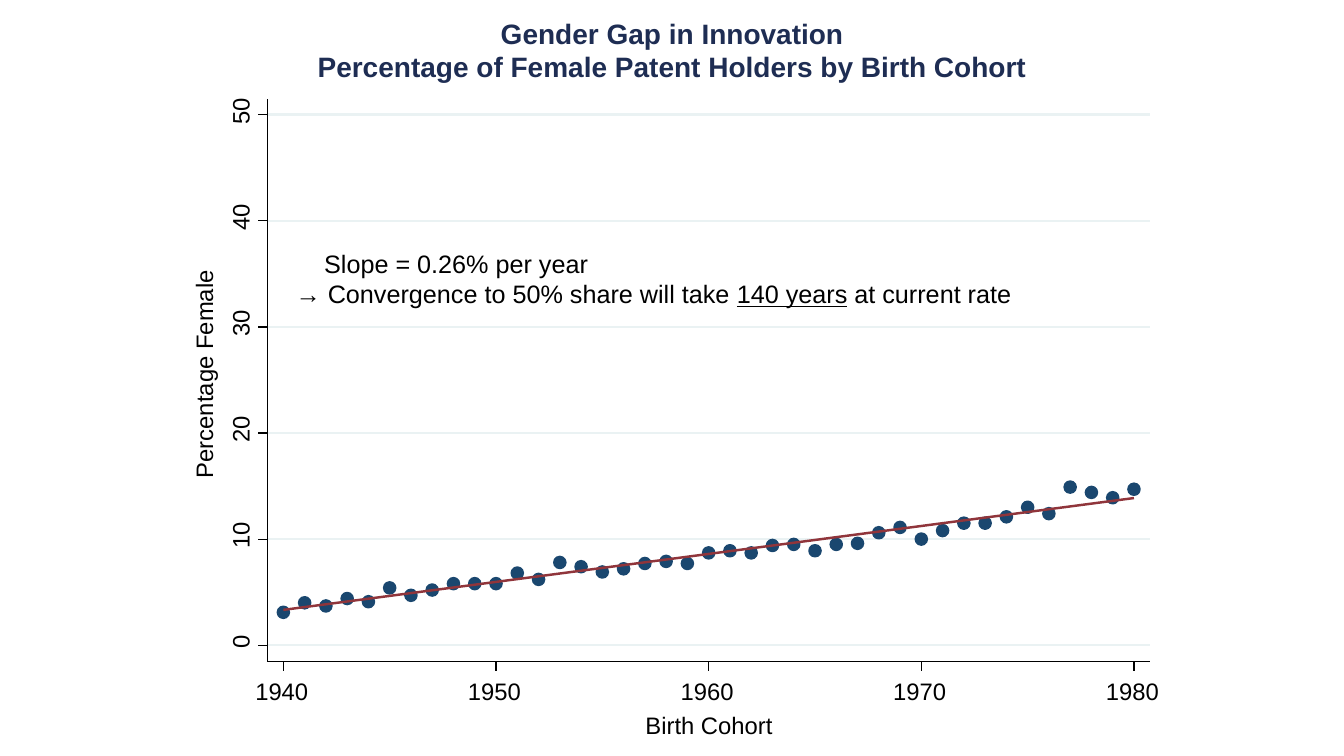
from lxml import etree
from pptx import Presentation
from pptx.dml.color import RGBColor
from pptx.enum.shapes import MSO_CONNECTOR, MSO_SHAPE
from pptx.enum.text import MSO_ANCHOR, MSO_AUTO_SIZE, PP_ALIGN
from pptx.oxml.ns import qn
from pptx.util import Cm, Pt

STRAIGHT, OVAL = MSO_CONNECTOR.STRAIGHT, MSO_SHAPE.OVAL
TOP, FIXED = MSO_ANCHOR.TOP, MSO_AUTO_SIZE.NONE
LEFT, MID = PP_ALIGN.LEFT, PP_ALIGN.CENTER

NAVY, BLUE, RED = "1E2D53", "1A476F", "90353B"
BLACK, PALE = "000000", "EAF2F3"
THIN, THICK = 0.88, 1.75
LABEL = {"name": "Arial", "size": Pt(17), "bold": False}
NOTE = {"name": "Arial", "size": Pt(18), "bold": False}
HEAD = {"name": "Arial", "size": Pt(20), "bold": True}

# Plot frame in cm, and the data range it spans
X0, Y0, X1, Y1 = 6.74, 2.49, 28.98, 16.66
TICK, DOT = 0.25, 0.28
XMIN, XMAX, YMIN, YMAX = 1939.25, 1980.75, -1.5, 51.5
SHARE = [3.1, 4.0, 3.7, 4.4, 4.1, 5.4, 4.7, 5.2, 5.8, 5.8,
         5.8, 6.8, 6.2, 7.8, 7.4, 6.9, 7.2, 7.7, 7.9, 7.7,
         8.7, 8.9, 8.7, 9.4, 9.5, 8.9, 9.5, 9.6, 10.6, 11.1,
         10.0, 10.8, 11.5, 11.5, 12.1, 13.0, 12.4, 14.9, 14.4, 13.9, 14.7]
TREND = [(1940, 3.33), (1960, 8.6), (1980, 13.87)]


def tint(code):
    return RGBColor.from_string(code)


def assign(item, values):
    for key, value in values.items():
        setattr(item, key, value)


def across(year):
    return X0 + (year - XMIN) / (XMAX - XMIN) * (X1 - X0)


def down(share):
    return Y1 - (share - YMIN) / (YMAX - YMIN) * (Y1 - Y0)


def style(font, values, code):
    assign(font, values)
    font.color.rgb = tint(code)


def stroke(line, code, width):
    line.color.rgb = tint(code)
    line.width = Pt(width)


def set_frame(frame):
    assign(frame, {"word_wrap": True, "auto_size": FIXED,
                   "vertical_anchor": TOP, "margin_left": 0,
                   "margin_right": 0, "margin_top": 0, "margin_bottom": 0})


def add_line(slide, start, end, code, width):
    line = slide.shapes.add_connector(
        STRAIGHT, *(Cm(v) for v in (*start, *end)))
    stroke(line.line, code, width)
    etree.SubElement(line._element.spPr, qn("a:effectLst"))


def add_label(slide, text, x, y, width=1.5, turn=0):
    """Write one centred line of text around the point x, y."""
    high = 0.74
    box = slide.shapes.add_textbox(
        Cm(x - width / 2), Cm(y - high / 2), Cm(width), Cm(high))
    box.rotation = turn
    set_frame(box.text_frame)
    para = box.text_frame.paragraphs[0]
    para.alignment = MID
    run = para.add_run()
    run.text = text
    style(run.font, LABEL, BLACK)


def add_title(slide):
    title = slide.shapes.title
    assign(title, {"left": Cm(4.24), "top": Cm(0.41),
                   "width": Cm(25.4), "height": Cm(1.7)})
    frame = title.text_frame
    frame.text = ("Gender Gap in Innovation\n"
                  "Percentage of Female Patent Holders by Birth Cohort")
    set_frame(frame)
    for para in frame.paragraphs:
        para.alignment = MID
        style(para.runs[0].font, HEAD, NAVY)


def add_dot(slide, year, share):
    dot = slide.shapes.add_shape(
        OVAL, Cm(across(year) - DOT / 2), Cm(down(share) - DOT / 2),
        Cm(DOT), Cm(DOT))
    dot.shadow.inherit = False
    dot.fill.solid()
    dot.fill.fore_color.rgb = tint(BLUE)
    stroke(dot.line, BLUE, THICK)


def add_trend(slide):
    first, *rest = [(Cm(across(year)), Cm(down(share)))
                    for year, share in TREND]
    build = slide.shapes.build_freeform(*first)
    build.add_line_segments(rest, close=False)
    trend = build.convert_to_shape()
    trend.shadow.inherit = False
    trend.fill.background()
    stroke(trend.line, RED, THICK)


def add_axes(slide):
    add_line(slide, (X0, Y1), (X0, Y0), BLACK, THIN)
    add_line(slide, (X0, Y1), (X1, Y1), BLACK, THIN)
    for share in range(0, 51, 10):
        y = down(share)
        add_line(slide, (X0, y), (X0 - TICK, y), BLACK, THIN)
        add_label(slide, str(share), 6.06, y - 0.09, turn=270)
    for year in range(1940, 1981, 10):
        x = across(year)
        add_line(slide, (x, Y1), (x, Y1 + TICK), BLACK, THIN)
        add_label(slide, str(year), x - 0.04, 17.41)
    add_label(slide, "Percentage Female", 5.14, 9.43, 5.3, 270)
    add_label(slide, "Birth Cohort", 17.87, 18.28, 3.3)


def add_note(slide):
    box = slide.shapes.add_textbox(Cm(7.45), Cm(6.25), Cm(18.6), Cm(1.7))
    frame = box.text_frame
    set_frame(frame)
    rows = [(0.72, [("Slope = 0.26% per year", False)]),
            (0, [("→ Convergence to 50% share will take ", False),
                 ("140 years", True), (" at current rate", False)])]
    for i, (inset, runs) in enumerate(rows):
        para = frame.add_paragraph() if i else frame.paragraphs[0]
        para.alignment = LEFT
        para._p.get_or_add_pPr().set("marL", str(Cm(inset)))
        for text, under in runs:
            run = para.add_run()
            run.text = text
            style(run.font, {**NOTE, "underline": under}, BLACK)


def main():
    deck = Presentation()
    assign(deck, {"slide_width": Cm(33.87), "slide_height": Cm(19.05)})
    slide = deck.slides.add_slide(deck.slide_layouts[5])
    add_title(slide)
    # Grid lines lie behind the dots
    for share in range(0, 51, 10):
        add_line(slide, (X0, down(share)), (X1, down(share)), PALE, THICK)
    # One dot for each birth cohort, then the fitted line
    for year, share in enumerate(SHARE, 1940):
        add_dot(slide, year, share)
    add_trend(slide)
    add_axes(slide)
    add_note(slide)
    deck.save("out.pptx")


if __name__ == "__main__":
    main()
